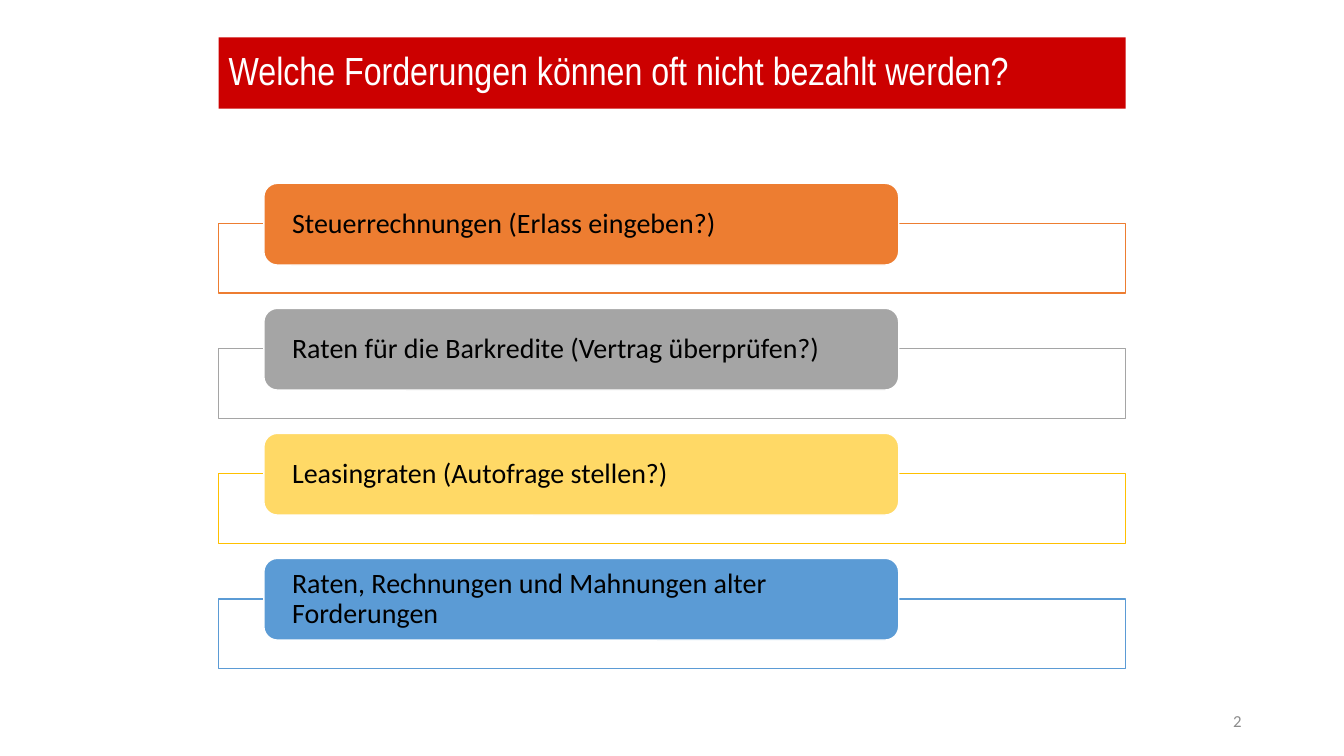
from lxml.etree import SubElement
from pptx import Presentation
from pptx.dml.color import RGBColor
from pptx.enum.shapes import MSO_SHAPE as Shape
from pptx.enum.text import MSO_ANCHOR as Anchor, MSO_AUTO_SIZE as Fit, PP_ALIGN as Align
from pptx.oxml.ns import qn
from pptx.util import Cm, Pt

# Content
RED = RGBColor(0xCC, 0x00, 0x00)
WHITE = RGBColor(0xFF, 0xFF, 0xFF)
BLACK = RGBColor(0x00, 0x00, 0x00)
DIM = RGBColor(0x8C, 0x8C, 0x8C)
ORANGE = RGBColor(0xED, 0x7D, 0x31)
GRAY = RGBColor(0xA5, 0xA5, 0xA5)
GOLD = RGBColor(0xFF, 0xC0, 0x00)
YELLOW = RGBColor(0xFF, 0xD9, 0x66)
BLUE = RGBColor(0x5B, 0x9B, 0xD5)

TITLE = "Welche Forderungen können oft nicht bezahlt werden?"
CLAIMS = [  # text, pill fill, frame line
    ("Steuerrechnungen (Erlass eingeben?)", ORANGE, ORANGE),
    ("Raten für die Barkredite (Vertrag überprüfen?)", GRAY, GRAY),
    ("Leasingraten (Autofrage stellen?)", YELLOW, GOLD),
    ("Raten, Rechnungen und Mahnungen alter Forderungen", BLUE, BLUE),
]
NUMBER = "2"

# Layout in cm
LEFT, WIDTH = 5.51, 22.86
TOP, STEP = 4.62, 3.15
PILL_W, PILL_H = 16, 2.06
FRAME_H = 1.75
INDENT, DROP = 1.14, 1.02


def write(shape, text, font, size, color, align=Align.LEFT, lines=0.9):
    frame = shape.text_frame
    frame.text = text
    frame.word_wrap = True
    frame.auto_size = Fit.NONE
    frame.vertical_anchor = Anchor.MIDDLE
    par = frame.paragraphs[0]
    par.alignment = align
    par.line_spacing = lines
    face = par.runs[0].font
    face.name, face.size, face.color.rgb = font, Pt(size), color


def add_box(kind, x, y, w, h, fill, line):
    box = slide.shapes.add_shape(kind, Cm(x), Cm(y), Cm(w), Cm(h))
    box.shadow.inherit = False
    box.fill.solid()
    box.fill.fore_color.rgb = fill
    box.line.color.rgb = line
    box.line.width = Pt(1)
    return box


deck = Presentation()
deck.slide_width, deck.slide_height = Cm(33.87), Cm(19.05)
slide = deck.slides.add_slide(deck.slide_layouts[5])

# Title bar
title = slide.shapes.title
title.left, title.top = Cm(LEFT), Cm(0.94)
title.width, title.height = Cm(WIDTH), Cm(1.8)
title.fill.solid()
title.fill.fore_color.rgb = RED
write(title, TITLE, "Arial Narrow", 28, WHITE)

# Frames, each with a pill over its top edge
for i, (text, fill, line) in enumerate(CLAIMS):
    y = TOP + i * STEP
    frame = add_box(Shape.RECTANGLE, LEFT, y + DROP, WIDTH, FRAME_H, WHITE, line)
    tint = frame.element.spPr.find(qn("a:solidFill")).find(qn("a:srgbClr"))
    SubElement(tint, qn("a:alpha")).set("val", "90000")

    pill = add_box(Shape.ROUNDED_RECTANGLE, LEFT + INDENT, y, PILL_W, PILL_H, fill, WHITE)
    write(pill, text, "Calibri", 20, BLACK)
    inner = pill.text_frame
    inner.margin_left = inner.margin_right = Cm(0.61)
    inner.margin_top = inner.margin_bottom = 0

# Slide number
number = slide.shapes.add_textbox(Cm(23.92), Cm(17.66), Cm(7.62), Cm(1.01))
write(number, NUMBER, "Calibri", 12, DIM, Align.RIGHT, 1.0)

deck.save("out.pptx")
